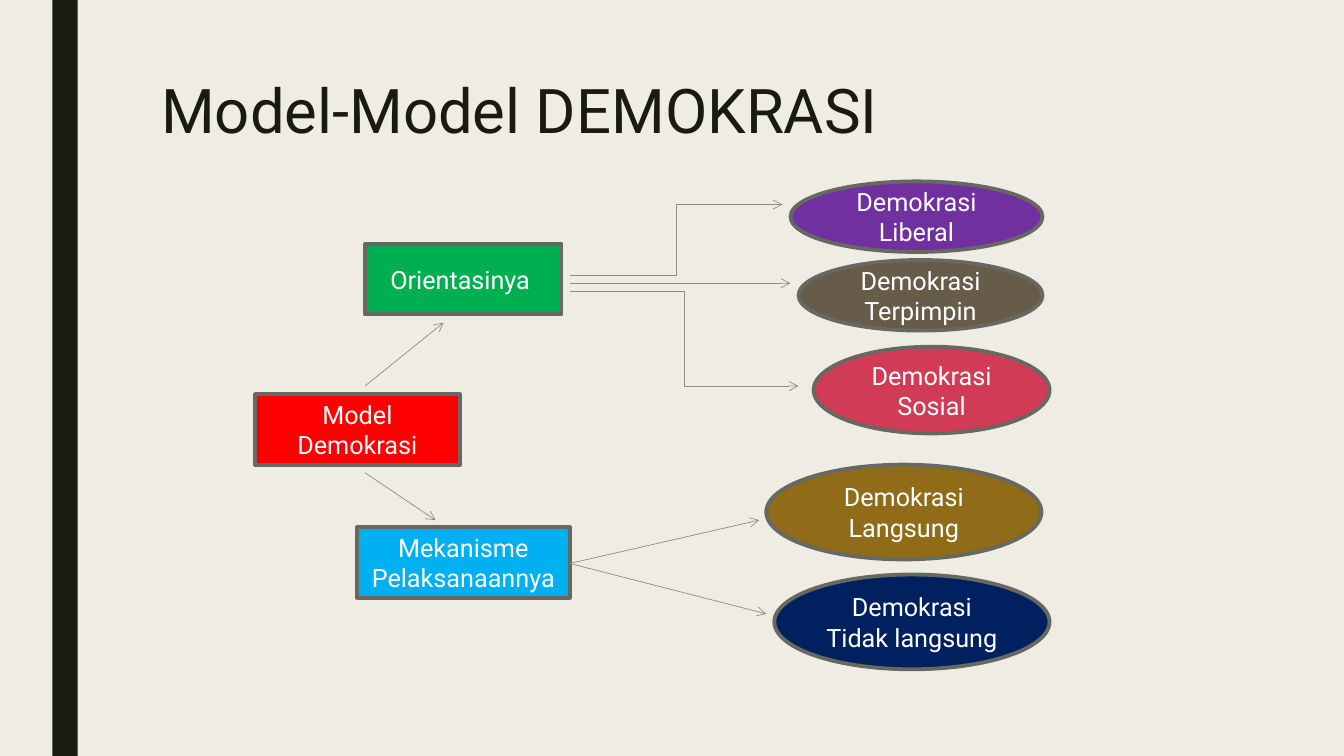
from pptx import Presentation
from pptx import util as u
from pptx.dml.color import RGBColor
from pptx.enum import shapes, text
from pptx.oxml.ns import qn
from lxml import etree

PAPER = RGBColor(0xEF, 0xED, 0xE3)
INK = RGBColor(0x19, 0x1B, 0x0E)
WHITE = RGBColor(0xFF, 0xFF, 0xFF)
EDGE = RGBColor(0x68, 0x68, 0x63)
WIRE = RGBColor(0x8C, 0x8D, 0x86)
RED = RGBColor(0xFF, 0x00, 0x00)
GREEN = RGBColor(0x00, 0xB0, 0x50)
BLUE = RGBColor(0x00, 0xB0, 0xF0)
PURPLE = RGBColor(0x70, 0x30, 0xA0)
BROWN = RGBColor(0x67, 0x5C, 0x49)
ROSE = RGBColor(0xD1, 0x3B, 0x56)
GOLD = RGBColor(0x90, 0x6B, 0x18)
NAVY = RGBColor(0x00, 0x20, 0x60)

# Content: label, fill, (left, top, width, height) in inches
TITLE = "Model-Model DEMOKRASI"
BOXES = [
    ("Model Demokrasi", RED, (2.53, 3.91, 2.03, 0.7)),
    ("Orientasinya ", GREEN, (3.62, 2.42, 1.95, 0.7)),
    ("Mekanisme Pelaksanaannya", BLUE, (3.54, 5.23, 2.11, 0.7)),
]
OVALS = [
    ("Demokrasi Liberal", PURPLE, (7.84, 1.8, 2.5, 0.7)),
    ("Demokrasi Terpimpin", BROWN, (7.92, 2.58, 2.42, 0.7)),
    ("Demokrasi Sosial", ROSE, (8.07, 3.44, 2.34, 0.86)),
    ("Demokrasi Langsung", GOLD, (7.6, 4.61, 2.73, 0.94)),
    ("Demokrasi Tidak langsung", NAVY, (7.68, 5.7, 2.73, 0.94)),
]
# Arrows: start and end points by kind
PORT = 5.65  # x where arrows leave the middle column
STRAIGHT = [
    ((3.62, 4.69), (4.32, 5.16)),
    ((3.62, 3.83), (4.4, 3.2)),
    ((PORT, 5.59), (7.6, 6.09)),
    ((PORT, 5.59), (7.53, 5.16)),
    ((PORT, 2.81), (7.84, 2.81)),
]
BENT = [
    ((PORT, 2.89), (7.92, 3.83)),
    ((PORT, 2.73), (7.76, 2.03)),
]

deck = Presentation()
deck.slide_width, deck.slide_height = u.Inches(13.33), u.Inches(7.5)
slide = deck.slides.add_slide(deck.slide_layouts[6])
slide.background.fill.solid()
slide.background.fill.fore_color.rgb = PAPER


def inches(vals):
    return [u.Inches(v) for v in vals]


def write(shape, words, size, color, frame, para):
    tf = shape.text_frame
    tf.text = words
    line = tf.paragraphs[0]
    font = line.runs[0].font
    font.color.rgb = color
    looks = [(tf, {"word_wrap": True, **frame}), (line, para),
             (font, {"name": "Roboto", "size": u.Pt(size)})]
    for part, vals in looks:
        for key, val in vals.items():
            setattr(part, key, val)


def block(kind, fill, place):
    shape = slide.shapes.add_shape(kind, *inches(place))
    shape.shadow.inherit = False
    shape.fill.solid()
    shape.fill.fore_color.rgb = fill
    shape.line.fill.background()
    return shape


def node(kind, words, fill, place):
    shape = block(kind, fill, place)
    shape.line.color.rgb = EDGE
    shape.line.width = u.Pt(2.75)
    write(shape, words, 18, WHITE,
          {"vertical_anchor": text.MSO_ANCHOR.MIDDLE},
          {"alignment": text.PP_ALIGN.CENTER})


def arrow(kind, start, end):
    wire = slide.shapes.add_connector(kind, *inches(start + end))
    wire.line.color.rgb = WIRE
    wire.line.width = u.Pt(0.5)
    etree.SubElement(wire.line._get_or_add_ln(), qn("a:tailEnd"), type="arrow")
    etree.SubElement(wire._element.spPr, qn("a:effectLst"))


# Side band and title
block(shapes.MSO_SHAPE.RECTANGLE, INK, (0.52, 0, 0.25, 7.5))
head = slide.shapes.add_textbox(*inches((1.5, 0.75, 10.5, 1.62)))
write(head, TITLE, 44, INK, {"vertical_anchor": text.MSO_ANCHOR.TOP},
      {"line_spacing": 0.89})

# Boxes and ovals
for kind, group in ((shapes.MSO_SHAPE.RECTANGLE, BOXES),
                    (shapes.MSO_SHAPE.OVAL, OVALS)):
    for item in group:
        node(kind, *item)

# Arrows
for kind, group in ((shapes.MSO_CONNECTOR.STRAIGHT, STRAIGHT),
                    (shapes.MSO_CONNECTOR.ELBOW, BENT)):
    for ends in group:
        arrow(kind, *ends)

deck.save("out.pptx")
